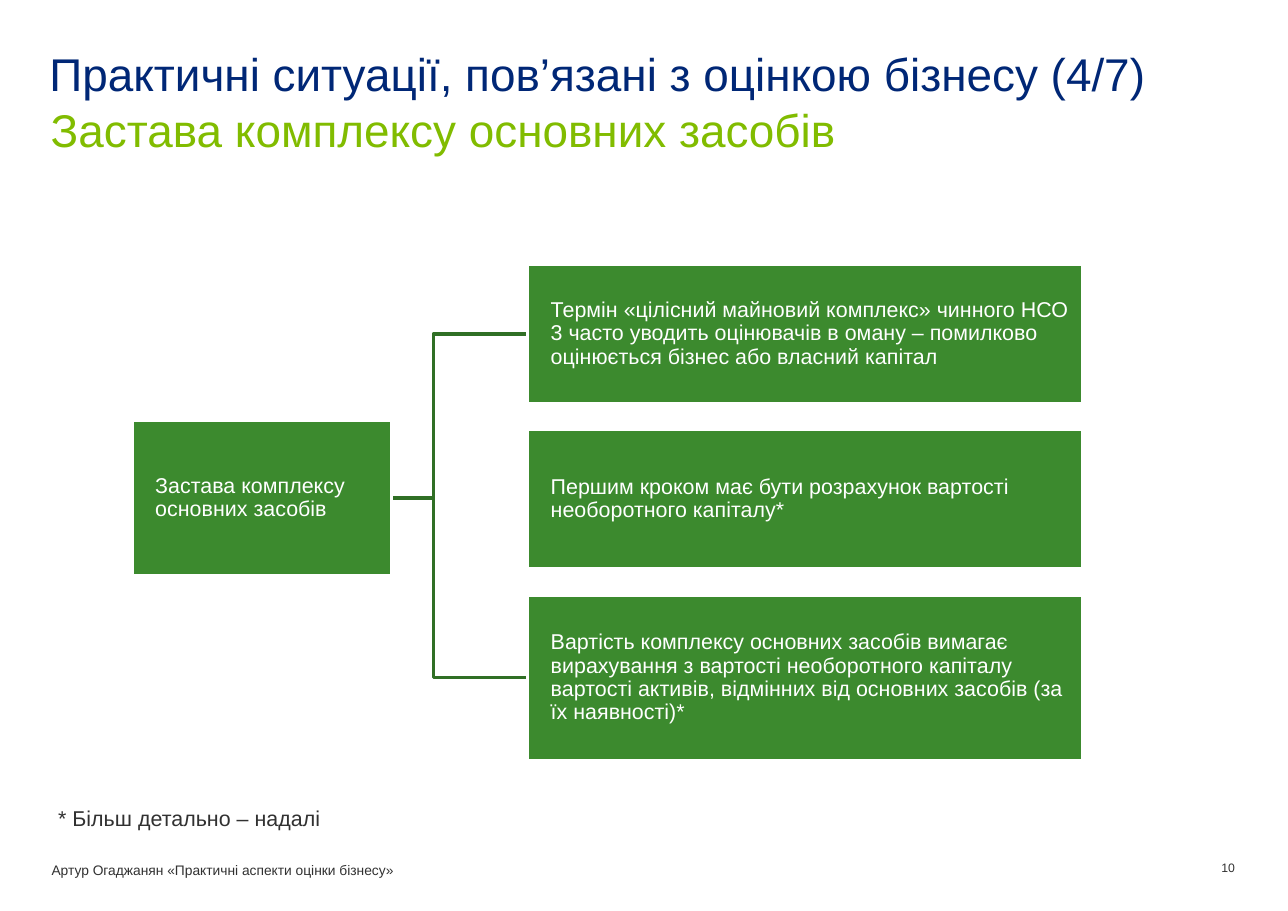
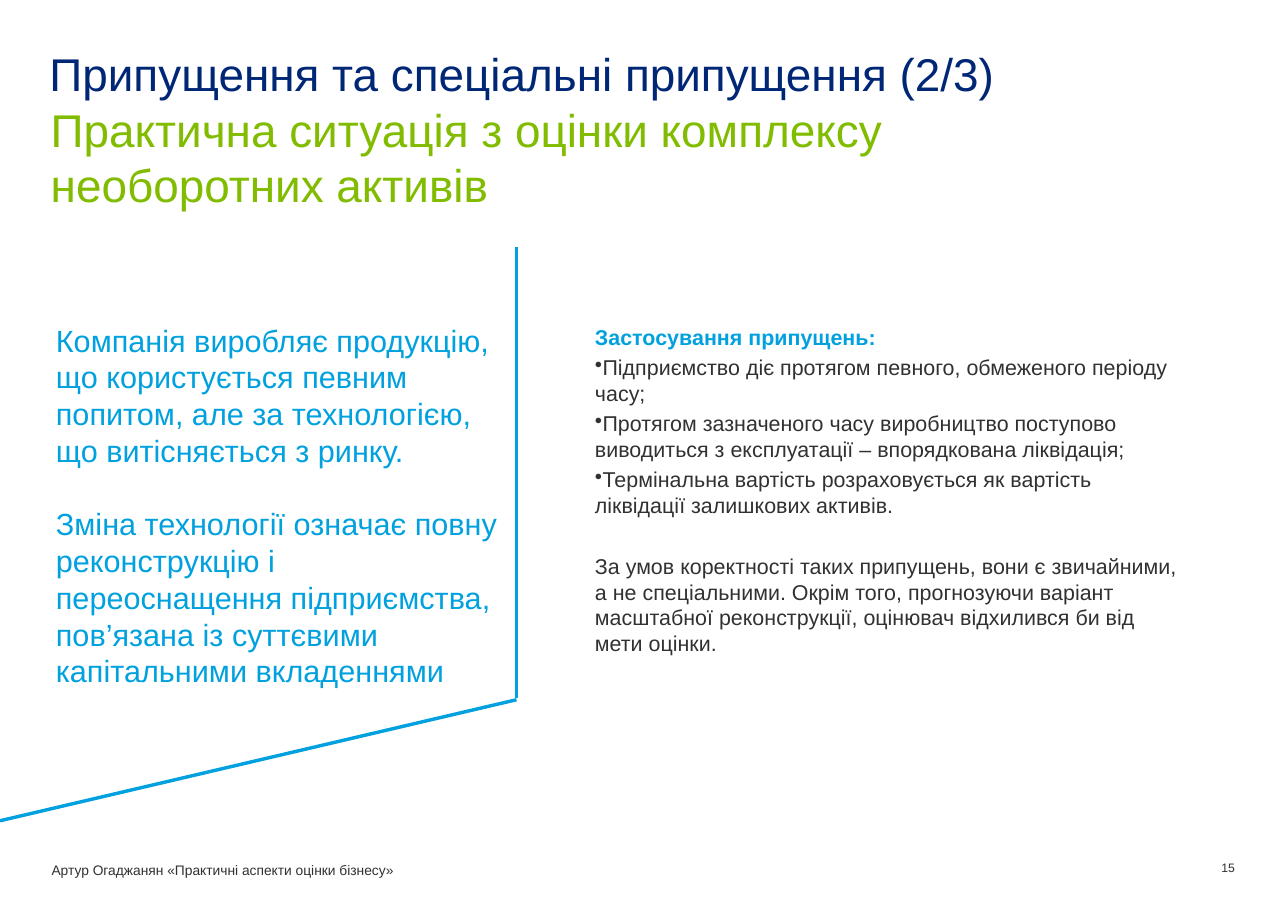
"""Build two slides on the practice of business valuation."""
import dataclasses
import typing

import lxml.etree
import pptx
import pptx.dml.color
import pptx.enum.shapes
import pptx.enum.text
import pptx.oxml.ns
import pptx.presentation
import pptx.shapes.autoshape
import pptx.slide
import pptx.text.text
import pptx.util

Cm = pptx.util.Cm
Pt = pptx.util.Pt
Align = pptx.enum.text.PP_ALIGN
Anchor = pptx.enum.text.MSO_ANCHOR

FONT = "Arial"
NAVY, LIME, CYAN = "002776", "81BC00", "00A1DE"
GREEN, DARK_GREEN = "3C8A2E", "306F25"
GREY, WHITE = "313131", "FFFFFF"
TITLE_LINE = 1.28
FOOTER = "Артур Огаджанян «Практичні аспекти оцінки бізнесу»"


@dataclasses.dataclass(frozen=True)
class Area:
    """A rectangle in centimetres."""

    left: float
    top: float
    width: float
    height: float

    @property
    def middle(self) -> float:
        """Return the vertical centre."""
        return self.top + self.height / 2

    def lengths(self) -> tuple[pptx.util.Length, ...]:
        """Return the rectangle as lengths."""
        return Cm(self.left), Cm(self.top), Cm(self.width), Cm(self.height)


@dataclasses.dataclass(frozen=True)
class TextLine:
    """One paragraph and its format."""

    text: str
    size: float = 14
    color: str = GREY
    bold: bool = False
    bullet: bool = False
    indent: float = 0
    format: dict[str, typing.Any] = dataclasses.field(default_factory=dict)


@dataclasses.dataclass(frozen=True)
class Heading:
    """The title, subtitle and number of a slide."""

    title: str
    subtitle: str
    number: int
    title_width: float
    subtitle_lines: int = 1


@dataclasses.dataclass(frozen=True)
class Node:
    """A labelled box of the tree."""

    area: Area
    text: str


def rgb(color: str) -> pptx.dml.color.RGBColor:
    """Turn a hex string into a colour."""
    return pptx.dml.color.RGBColor.from_string(color)


def set_format(target: typing.Any, values: dict[str, typing.Any]) -> None:
    """Set every named attribute of the target."""
    for name, value in values.items():
        setattr(target, name, value)


def set_line(line: typing.Any, color: str, width: float) -> None:
    """Give a line its colour and width."""
    line.color.rgb = rgb(color)
    line.width = Pt(width)


def write_lines(
    frame: pptx.text.text.TextFrame,
    lines: typing.Sequence[TextLine],
    inset: float | None = 0,
    anchor: Anchor = Anchor.TOP,
    wrap: bool = True,
) -> None:
    """Fill a text frame with formatted paragraphs."""
    set_format(frame, {
        "word_wrap": wrap,
        "vertical_anchor": anchor,
        "auto_size": pptx.enum.text.MSO_AUTO_SIZE.NONE,
    })
    if inset is not None:
        sides = ("left", "top", "right", "bottom")
        set_format(frame, {f"margin_{side}": Cm(inset) for side in sides})
    for index, line in enumerate(lines):
        paragraph = frame.paragraphs[0] if index == 0 else frame.add_paragraph()
        set_format(paragraph, {"alignment": Align.LEFT} | line.format)
        properties = paragraph._p.get_or_add_pPr()
        properties.set("marL", str(Cm(line.indent)))
        properties.set("indent", "0")
        if line.bullet:
            tag = pptx.oxml.ns.qn("a:buChar")
            lxml.etree.SubElement(properties, tag).set("char", "•")
        run = paragraph.add_run()
        run.text = line.text
        set_format(run.font, {"name": FONT, "size": Pt(line.size), "bold": line.bold})
        run.font.color.rgb = rgb(line.color)


def add_text(
    slide: pptx.slide.Slide,
    area: Area,
    lines: typing.Sequence[TextLine],
    **options: typing.Any,
) -> None:
    """Add a text box."""
    write_lines(slide.shapes.add_textbox(*area.lengths()).text_frame, lines, **options)


def add_straight_line(
    slide: pptx.slide.Slide, start: tuple[float, float], end: tuple[float, float]
) -> None:
    """Add a cyan divider line."""
    connector = slide.shapes.add_connector(
        pptx.enum.shapes.MSO_CONNECTOR.STRAIGHT, *map(Cm, start + end)
    )
    set_line(connector.line, CYAN, 2.25)
    lxml.etree.SubElement(
        connector._element.spPr, pptx.oxml.ns.qn("a:effectLst")
    )


def add_branch(slide: pptx.slide.Slide, root: Node, leaf: Node) -> None:
    """Draw the bent line from the root to a leaf."""
    start_x, bend_x, end_x = 7.82, 9.99, leaf.area.left
    points = [
        (Cm(x), Cm(y))
        for x, y in (
            (start_x, root.area.middle),
            (bend_x, root.area.middle),
            (bend_x, leaf.area.middle),
            (end_x, leaf.area.middle),
        )
    ]
    builder = slide.shapes.build_freeform(*points[0])
    builder.add_line_segments(points[1:], close=False)
    branch = builder.convert_to_shape()
    branch.shadow.inherit = False
    branch.fill.background()
    set_line(branch.line, DARK_GREEN, 2)


def add_node(slide: pptx.slide.Slide, node: Node) -> None:
    """Draw a green box with its text."""
    shape = slide.shapes.add_shape(
        pptx.enum.shapes.MSO_SHAPE.RECTANGLE, *node.area.lengths()
    )
    shape.shadow.inherit = False
    shape.fill.solid()
    shape.fill.fore_color.rgb = rgb(GREEN)
    set_line(shape.line, WHITE, 2)
    label = TextLine(
        node.text, color=WHITE, indent=0.5, format={"line_spacing": 0.9}
    )
    write_lines(shape.text_frame, [label], inset=0.03, anchor=Anchor.MIDDLE)


def add_slide(
    presentation: pptx.presentation.Presentation, heading: Heading
) -> pptx.slide.Slide:
    """Add a slide with its headings, footer and number."""
    slide = presentation.slides.add_slide(presentation.slide_layouts[5])
    title = slide.shapes.title
    area = Area(1.14, 1.04, heading.title_width, TITLE_LINE)
    set_format(title, dict(zip(("left", "top", "width", "height"), area.lengths())))
    write_lines(title.text_frame, [TextLine(heading.title, 30, NAVY)])
    add_text(
        slide,
        Area(1.17, 2.34, 25.07, TITLE_LINE * heading.subtitle_lines),
        [TextLine(heading.subtitle, 30, LIME)],
    )
    add_text(
        slide, Area(1.19, 19.71, 22.07, 0.71), [TextLine(FOOTER, 9)],
        anchor=Anchor.MIDDLE,
    )
    number = TextLine(str(heading.number), 8, format={"alignment": Align.RIGHT})
    add_text(slide, Area(25.91, 19.61, 2.57, 0.76), [number], anchor=Anchor.MIDDLE)
    return slide


def build_pledge_slide(presentation: pptx.presentation.Presentation) -> None:
    """Build the tree about pledged fixed assets."""
    subject = "Застава комплексу основних засобів"
    slide = add_slide(presentation, Heading(
        "Практичні ситуації, пов’язані з оцінкою бізнесу (4/7)", subject, 10, 26.31
    ))
    root = Node(Area(3.05, 9.7, 5.97, 3.56), subject)
    leaf_texts = (
        (3.2, "Термін «цілісний майновий комплекс» чинного НСО 3 часто уводить "
              "оцінювачів в оману – помилково оцінюється бізнес або власний капітал"),
        (3.2, "Першим кроком має бути розрахунок вартості необоротного капіталу*"),
        (3.81, "Вартість комплексу основних засобів вимагає вирахування з вартості "
               "необоротного капіталу вартості активів, відмінних від основних "
               "засобів (за їх наявності)*"),
    )
    leaves = [
        Node(Area(12.17, 6.1 + 3.81 * row, 12.8, height), text)
        for row, (height, text) in enumerate(leaf_texts)
    ]
    for leaf in (leaves[0], leaves[-1]):
        add_branch(slide, root, leaf)
    for node in (root, *leaves):
        add_node(slide, node)
    add_text(
        slide, Area(1.09, 18.44, 6.58, 0.86),
        [TextLine("* Більш детально – надалі")], inset=None, wrap=False,
    )


def build_assumptions_slide(presentation: pptx.presentation.Presentation) -> None:
    """Build the case and the assumptions applied to it."""
    slide = add_slide(presentation, Heading(
        "Припущення та спеціальні припущення (2/3)",
        "Практична ситуація з оцінки комплексу необоротних активів",
        15, 23.29, subtitle_lines=2,
    ))
    case = [
        TextLine("Компанія виробляє продукцію, що користується певним попитом, "
                 "але за технологією, що витісняється з ринку.", 20, CYAN),
        TextLine("Зміна технології означає повну реконструкцію і переоснащення "
                 "підприємства, пов’язана із суттєвими капітальними вкладеннями",
                 20, CYAN, format={"space_before": Pt(24)}),
    ]
    add_text(slide, Area(1.04, 7.29, 10.77, 8.81), case, inset=None)
    spacing = {"space_after": Pt(3)}
    assumptions = (
        "Підприємство діє протягом певного, обмеженого періоду часу;",
        "Протягом зазначеного часу виробництво поступово виводиться з "
        "експлуатації – впорядкована ліквідація;",
        "Термінальна вартість розраховується як вартість ліквідації "
        "залишкових активів.",
    )
    conclusion = (
        "За умов коректності таких припущень, вони є звичайними, а не спеціальними. "
        "Окрім того, прогнозуючи варіант масштабної реконструкції, оцінювач "
        "відхилився би від мети оцінки."
    )
    add_text(slide, Area(13.72, 7.47, 13.67, 8.03), [
        TextLine("Застосування припущень:", color=CYAN, bold=True, format=spacing),
        *(TextLine(text, bullet=True, format=spacing) for text in assumptions),
        TextLine(conclusion, format=spacing | {"space_before": Pt(20)}),
    ])
    add_straight_line(slide, (11.91, 5.69), (11.91, 16.1))
    add_straight_line(slide, (11.91, 16.13), (0, 18.92))


def main() -> None:
    """Create and save the presentation."""
    presentation = pptx.Presentation()
    set_format(presentation, {"slide_width": Cm(29.7), "slide_height": Cm(21)})
    build_pledge_slide(presentation)
    build_assumptions_slide(presentation)
    presentation.save("out.pptx")


if __name__ == "__main__":
    main()
